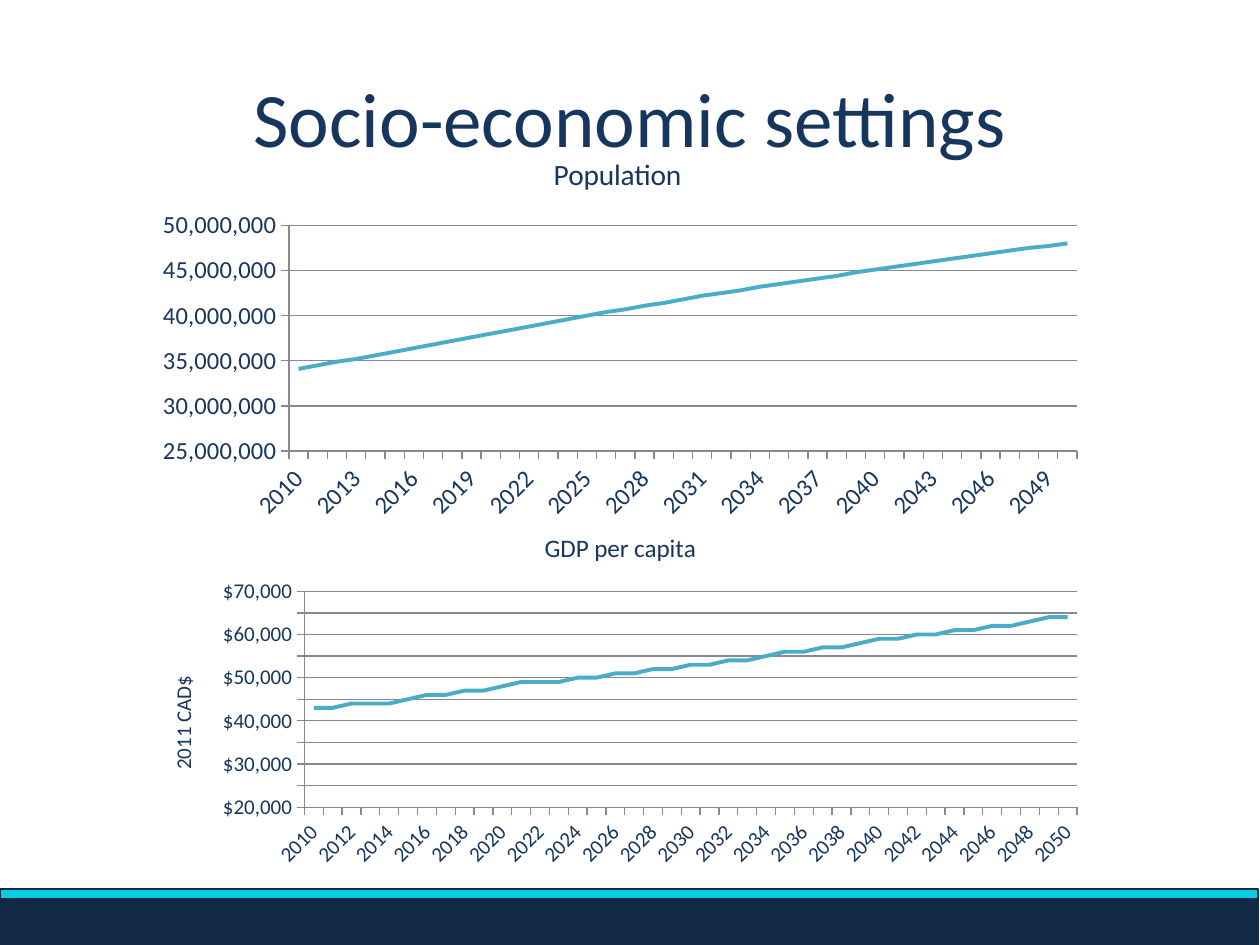
from lxml import etree
from pptx import Presentation
from pptx.chart.data import CategoryChartData
from pptx.dml.color import RGBColor
from pptx.enum.chart import XL_CHART_TYPE, XL_MARKER_STYLE, XL_TICK_MARK
from pptx.enum.shapes import MSO_SHAPE
from pptx.enum.text import MSO_ANCHOR, PP_ALIGN
from pptx.oxml.ns import qn
from pptx.util import Pt

LINE_CHART = XL_CHART_TYPE.LINE
NO_MARKER = XL_MARKER_STYLE.NONE
TICK_OUT = XL_TICK_MARK.OUTSIDE
RECTANGLE = MSO_SHAPE.RECTANGLE
MIDDLE = MSO_ANCHOR.MIDDLE
CENTER = PP_ALIGN.CENTER

NAVY = RGBColor(0x17, 0x36, 0x5D)
DARK = RGBColor(0x11, 0x28, 0x46)
CYAN = RGBColor(0x06, 0xCD, 0xE2)
TEAL = RGBColor(0x4B, 0xAC, 0xC6)
GRAY = RGBColor(0x87, 0x87, 0x95)
FONT = "Calibri"

HEADING = "Socio-economic settings"
YEARS = [str(year) for year in range(2010, 2051)]
POPULATION_MILLIONS = [
    34.1, 34.5, 34.9, 35.2, 35.6, 36.0, 36.4, 36.8, 37.2, 37.6,
    38.0, 38.4, 38.8, 39.2, 39.6, 40.0, 40.4, 40.7, 41.1, 41.4,
    41.8, 42.2, 42.5, 42.8, 43.2, 43.5, 43.8, 44.1, 44.4, 44.8,
    45.1, 45.4, 45.7, 46.0, 46.3, 46.6, 46.9, 47.2, 47.5, 47.7, 48.0,
]
GDP_THOUSANDS = [
    43, 43, 44, 44, 44, 45, 46, 46, 47, 47,
    48, 49, 49, 49, 50, 50, 51, 51, 52, 52,
    53, 53, 54, 54, 55, 56, 56, 57, 57, 58,
    59, 59, 60, 60, 61, 61, 62, 62, 63, 64, 64,
]
CHARTS = [
    {"title": "Population", "values": POPULATION_MILLIONS, "unit": 1000000,
     "range": (25000000, 50000000, 5000000), "format": "#,##0", "size": 14,
     "title_size": 16.8, "top": 77, "height": 225.4, "axis_title": None,
     "title_at": (231.2, 8.4), "plot_at": (83, 51.8, 450.4, 129.1)},
    {"title": "GDP per capita", "values": GDP_THOUSANDS, "unit": 1000,
     "range": (20000, 70000, 5000), "format": '"$"#,##0', "size": 12,
     "title_size": 14.4, "top": 292.3, "height": 207.4, "axis_title": "2011 CAD$",
     "title_at": (226.6, 8.4), "plot_at": (91.9, 45.6, 441.5, 123.4)},
]
AXIS_TITLE_AT = (12.3, 91.6)
CHART_LEFT, CHART_WIDTH = 82.1, 544.3
BANDS = [
    ((356.4, 151.2, 5.8, 719.3), CYAN, 1.5),
    ((346.3, 167, 25.9, 720), DARK, 1),
]


def add_span(para, text, size):
    span = para.add_run()
    span.text = text
    span.font.name = FONT
    span.font.size = Pt(size)
    span.font.bold = False
    span.font.color.rgb = NAVY


def place(element, position, chart_height):
    for old in element.findall(qn("c:layout")):
        element.remove(old)
    layout = etree.Element(qn("c:layout"))
    manual = etree.SubElement(layout, qn("c:manualLayout"))
    settings = [("xMode", "edge"), ("yMode", "edge")]
    if len(position) == 4:
        settings.insert(0, ("layoutTarget", "inner"))
    extents = (CHART_WIDTH, chart_height) * 2
    settings += [(name, length / extent)
                 for name, length, extent in zip("xywh", position, extents)]
    for name, value in settings:
        etree.SubElement(manual, qn("c:" + name)).set("val", str(value))
    element.insert(0 if element.find(qn("c:tx")) is None else 1, layout)


def add_line_chart(slide, info):
    data = CategoryChartData(number_format=info["format"])
    data.categories = YEARS
    data.add_series("Series 1", [round(value * info["unit"]) for value in info["values"]])
    height = info["height"]
    frame = slide.shapes.add_chart(
        LINE_CHART, Pt(CHART_LEFT), Pt(info["top"]), Pt(CHART_WIDTH), Pt(height), data)
    chart = frame.chart
    chart.has_legend = False
    chart.font.name = FONT
    chart.font.size = Pt(info["size"])
    chart.font.color.rgb = NAVY
    chart.has_title = True
    add_span(chart.chart_title.text_frame.paragraphs[0], info["title"], info["title_size"])

    plot = chart.plots[0]
    plot.vary_by_categories = False
    series = plot.series[0]
    series.smooth = False
    series.marker.style = NO_MARKER
    series.format.line.color.rgb = TEAL
    series.format.line.width = Pt(2.25)

    category_axis, value_axis = chart.category_axis, chart.value_axis
    for axis in (category_axis, value_axis):
        axis.major_tick_mark = TICK_OUT
        axis.format.line.color.rgb = GRAY
        axis.tick_labels.font.size = Pt(info["size"])
    value_axis.minimum_scale, value_axis.maximum_scale, value_axis.major_unit = info["range"]
    value_axis.has_major_gridlines = True
    value_axis.major_gridlines.format.line.color.rgb = GRAY
    value_axis.tick_labels.number_format = info["format"]
    value_axis.tick_labels.number_format_is_linked = False

    root = chart.element
    root.xpath("//c:catAx/c:txPr/a:bodyPr")[0].set("rot", "-2700000")
    place(root.xpath("//c:plotArea")[0], info["plot_at"], height)
    place(root.xpath("//c:chart/c:title")[0], info["title_at"], height)
    if info["axis_title"]:
        text_frame = value_axis.axis_title.text_frame
        add_span(text_frame.paragraphs[0], info["axis_title"], info["size"])
        root.xpath("//c:valAx/c:title//a:bodyPr")[0].set("rot", "-5400000")
        place(root.xpath("//c:valAx/c:title")[0], AXIS_TITLE_AT, height)


def add_band(slide, bounds, color, line_width):
    band = slide.shapes.add_shape(RECTANGLE, *map(Pt, bounds))
    band.rotation = 270
    band.shadow.inherit = False
    band.fill.solid()
    band.fill.fore_color.rgb = color
    band.line.color.rgb = DARK
    band.line.width = Pt(line_width)


def main():
    deck = Presentation()
    deck.slide_width, deck.slide_height = Pt(720), Pt(540)
    slide = deck.slides.add_slide(deck.slide_layouts[5])

    title = slide.shapes.title
    title.left, title.top, title.width, title.height = map(Pt, (36, 21.6, 648, 90))
    title.text_frame.vertical_anchor = MIDDLE
    para = title.text_frame.paragraphs[0]
    para.alignment = CENTER
    add_span(para, HEADING, 44)

    for info in CHARTS:
        add_line_chart(slide, info)
    for bounds, color, line_width in BANDS:
        add_band(slide, bounds, color, line_width)
    deck.save("out.pptx")


if __name__ == "__main__":
    main()
